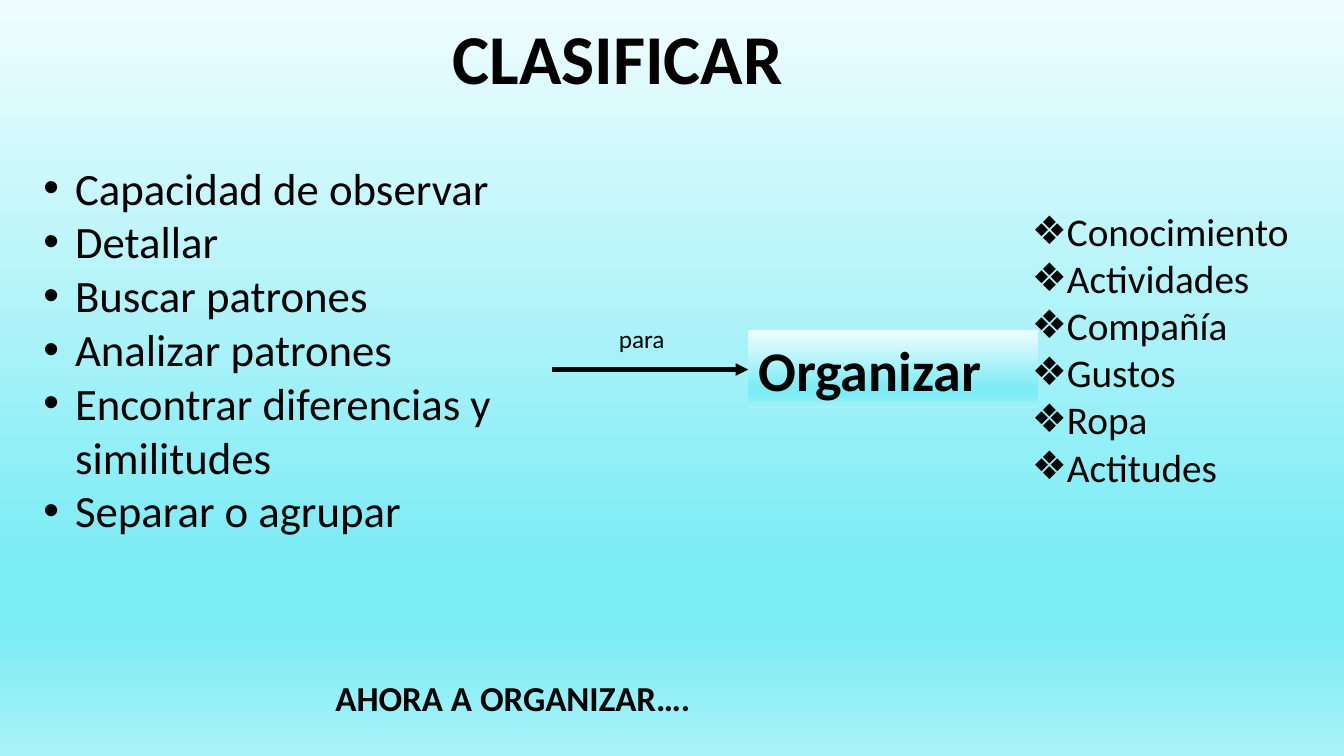
from dataclasses import dataclass
from lxml.etree import SubElement
from pptx import Presentation
from pptx.dml.color import RGBColor
from pptx.enum.shapes import MSO_CONNECTOR, MSO_SHAPE
from pptx.enum.text import MSO_ANCHOR, PP_ALIGN
from pptx.oxml.ns import qn
from pptx.util import Pt


@dataclass(frozen=True)
class Theme:
    font: str = "Calibri"
    mark: str = "Arial"
    ink: str = "000000"
    stops: tuple = ((0, "F0FDFE"), (74, "7CECF5"), (83, "7CECF5"), (100, "A8F3F8"))
    title: int = 50
    goal: int = 40
    skill: int = 32
    topic: int = 28
    close: int = 25
    label: int = 18
    indent: float = 22.5
    line: int = 3


THEME = Theme()
SKILLS = (
    "Capacidad de observar",
    "Detallar",
    "Buscar patrones",
    "Analizar patrones",
    "Encontrar diferencias y similitudes",
    "Separar o agrupar",
)
TOPICS = ("Conocimiento", "Actividades", "Compañía", "Gustos", "Ropa", "Actitudes")


def shade(fill, node):
    fill.gradient()
    fill.gradient_angle = 270
    stops = node.xpath(".//a:gsLst")[0]
    for stop in list(stops):
        stops.remove(stop)
    for place, color in THEME.stops:
        stop = SubElement(stops, qn("a:gs"), pos=str(place * 1000))
        SubElement(stop, qn("a:srgbClr"), val=color)


def add_mark(para, mark):
    props = para._p.get_or_add_pPr()
    indent = Pt(THEME.indent)
    props.set("marL", str(indent))
    props.set("indent", str(-indent))
    SubElement(props, qn("a:buFont"), typeface=THEME.mark)
    SubElement(props, qn("a:buChar"), char=mark)


def write(frame, *lines, size, bold=False, mark=None, align=PP_ALIGN.LEFT,
          anchor=MSO_ANCHOR.TOP, space=None):
    frame.word_wrap = True
    frame.vertical_anchor = anchor
    for index, line in enumerate(lines):
        para = frame.add_paragraph() if index else frame.paragraphs[0]
        para.alignment = align
        if space:
            para.line_spacing = space
        if mark:
            add_mark(para, mark)
        run = para.add_run()
        run.text = line
        run.font.name = THEME.font
        run.font.size = Pt(size)
        run.font.bold = bold
        run.font.color.rgb = RGBColor.from_string(THEME.ink)


def add_text(slide, box, *lines, **style):
    shape = slide.shapes.add_textbox(*map(Pt, box))
    write(shape.text_frame, *lines, **style)


def add_panel(slide, box, text, **style):
    shape = slide.shapes.add_shape(MSO_SHAPE.RECTANGLE, *map(Pt, box))
    shape.shadow.inherit = False
    shape.line.fill.background()
    shade(shape.fill, shape.element)
    write(shape.text_frame, text, **style)


def add_arrow(slide, start, end, level):
    arrow = slide.shapes.add_connector(
        MSO_CONNECTOR.STRAIGHT, Pt(start), Pt(level), Pt(end), Pt(level))
    arrow.line.color.rgb = RGBColor.from_string(THEME.ink)
    arrow.line.width = Pt(THEME.line)
    SubElement(arrow.line._get_or_add_ln(), qn("a:tailEnd"), type="triangle")
    SubElement(arrow.element.spPr, qn("a:effectLst"))


def main():
    deck = Presentation()
    deck.slide_width, deck.slide_height = Pt(960), Pt(540)
    slide = deck.slides.add_slide(deck.slide_layouts[6])
    shade(slide.background.fill, slide.element)

    add_text(slide, (221, 14.4, 452, 60), "CLASIFICAR ", size=THEME.title, bold=True,
             align=PP_ALIGN.CENTER, anchor=MSO_ANCHOR.MIDDLE, space=0.9)
    add_text(slide, (24, 111, 376, 279), *SKILLS, size=THEME.skill, mark="•")
    add_arrow(slide, 394.5, 534.5, 264)
    add_text(slide, (435, 227.5, 163, 29), "para", size=THEME.label)
    add_panel(slide, (534.5, 236, 207, 55.5), "Organizar", size=THEME.goal, bold=True)
    add_text(slide, (730, 144.7, 230, 211), *TOPICS, size=THEME.topic, mark="❖")
    add_text(slide, (232.5, 479.5, 537, 37.5), "AHORA A ORGANIZAR….",
             size=THEME.close, bold=True)
    deck.save("out.pptx")


if __name__ == "__main__":
    main()
